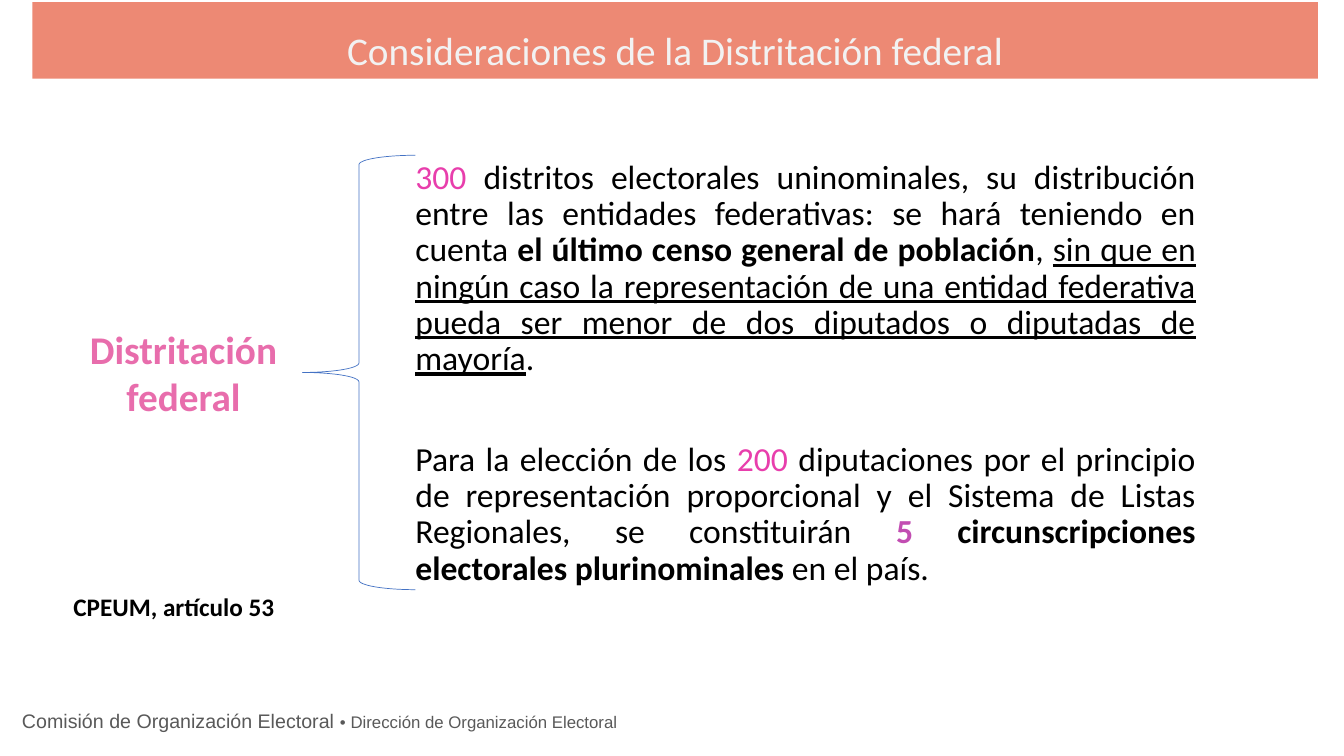
from lxml import etree
from pptx import Presentation
from pptx.dml.color import RGBColor
from pptx.enum.shapes import MSO_SHAPE
from pptx.enum.text import MSO_ANCHOR, MSO_AUTO_SIZE, PP_ALIGN
from pptx.oxml.ns import qn
from pptx.util import Inches, Pt

LEFT, CENTER, JUSTIFY = PP_ALIGN.LEFT, PP_ALIGN.CENTER, PP_ALIGN.JUSTIFY
TOP, BOTTOM = MSO_ANCHOR.TOP, MSO_ANCHOR.BOTTOM
BRACE = MSO_SHAPE.LEFT_BRACE
NO_FIT = MSO_AUTO_SIZE.NONE

COLORS = {
    "band": "ED8974",
    "title": "F2F2F2",
    "text": "000000",
    "number": "E83EAC",
    "regions": "C24DB2",
    "topic": "E86DAC",
    "brace": "4472C4",
    "footer": "595959",
}


def rgb(name):
    return RGBColor.from_string(COLORS[name])


class Deck:
    def __init__(self, prs, layout, font="Calibri"):
        self.s = prs.slides.add_slide(prs.slide_layouts[layout])
        self.font = font

    def place(self, sp, box):
        for name, value in zip(("left", "top", "width", "height"), box):
            setattr(sp, name, Inches(value))

    def frame(self, sp, anchor):
        tf = sp.text_frame
        for name, value in {"word_wrap": True, "auto_size": NO_FIT,
                            "vertical_anchor": anchor}.items():
            setattr(tf, name, value)
        return tf

    def add_runs(self, p, runs, base, **para):
        """Fill p with (text, changes) runs, each formatted from base."""
        for name, value in para.items():
            setattr(p, name, value)
        for text, changes in runs:
            r = p.add_run()
            r.text = text
            style = {"name": self.font, **base, **changes}
            r.font.color.rgb = rgb(style.pop("color"))
            style["size"] = Pt(style["size"])
            for name, value in style.items():
                setattr(r.font, name, value)

    def title(self, text, box):
        sp = self.s.shapes.title
        self.place(sp, box)
        sp.fill.solid()
        sp.fill.fore_color.rgb = rgb("band")
        tf = self.frame(sp, BOTTOM)
        self.add_runs(tf.paragraphs[0], [(text, {})],
                      {"size": 28, "color": "title"},
                      alignment=CENTER, line_spacing=0.9)

    def body(self, paragraphs, box, gap):
        sp = self.s.placeholders[1]
        self.place(sp, box)
        tf = self.frame(sp, TOP)
        for i, runs in enumerate(paragraphs):
            p = tf.paragraphs[0] if i == 0 else tf.add_paragraph()
            pPr = p._p.get_or_add_pPr()
            pPr.set("marL", "0")
            pPr.set("indent", "0")
            etree.SubElement(pPr, qn("a:buNone"))
            self.add_runs(p, runs, {"size": 24, "color": "text"},
                          alignment=JUSTIFY, line_spacing=0.9,
                          space_before=Pt(gap if i else 0))

    def text(self, runs, box, align=LEFT, **base):
        sp = self.s.shapes.add_textbox(*map(Inches, box))
        tf = self.frame(sp, TOP)
        self.add_runs(tf.paragraphs[0], runs, base, alignment=align)

    def brace(self, box):
        sp = self.s.shapes.add_shape(BRACE, *map(Inches, box))
        sp.shadow.inherit = False
        sp.fill.background()
        sp.line.color.rgb = rgb("brace")
        sp.line.width = Pt(0.5)


def main():
    prs = Presentation()
    prs.slide_width, prs.slide_height = Inches(13.33), Inches(7.5)
    deck = Deck(prs, layout=1)
    bold, number = {"bold": True}, {"color": "number"}

    deck.title("Consideraciones de la Distritación federal",
               (0.32, 0.02, 12.75, 0.76))
    deck.body([
        [("300", number),
         (" distritos electorales uninominales, su distribución entre las "
          "entidades federativas: se hará teniendo en cuenta ", {}),
         ("el último censo general de población", bold),
         (", ", {}),
         ("sin que en ningún caso la representación de una entidad federativa "
          "pueda ser menor de dos diputados o diputadas de mayoría",
          {"underline": True}),
         (".", {})],
        [("Para la elección de los ", {}),
         ("200 ", number),
         ("diputaciones por el principio de representación proporcional y el "
          "Sistema de Listas Regionales, se constituirán ", {}),
         ("5", {"color": "regions", "bold": True}),
         (" circunscripciones electorales plurinominales ", bold),
         ("en el país.", {})],
    ], (4.02, 1.54, 7.94, 4.41), gap=46)
    deck.brace((3, 1.54, 1.12, 4.31))
    deck.text([("Distritación federal", {})], (0.72, 3.18, 2.2, 1.04),
              CENTER, size=28, color="topic", bold=True)
    deck.text([("CPEUM, artículo 53", {})], (0.63, 5.82, 2.37, 0.4),
              size=18, color="text", bold=True)
    deck.text([("Comisión de Organización Electoral ", {}),
               ("• Dirección de Organización Electoral", {"size": 12})],
              (0.12, 6.98, 9.57, 0.34), size=14, color="footer", name="Arial")
    prs.save("out.pptx")


if __name__ == "__main__":
    main()
